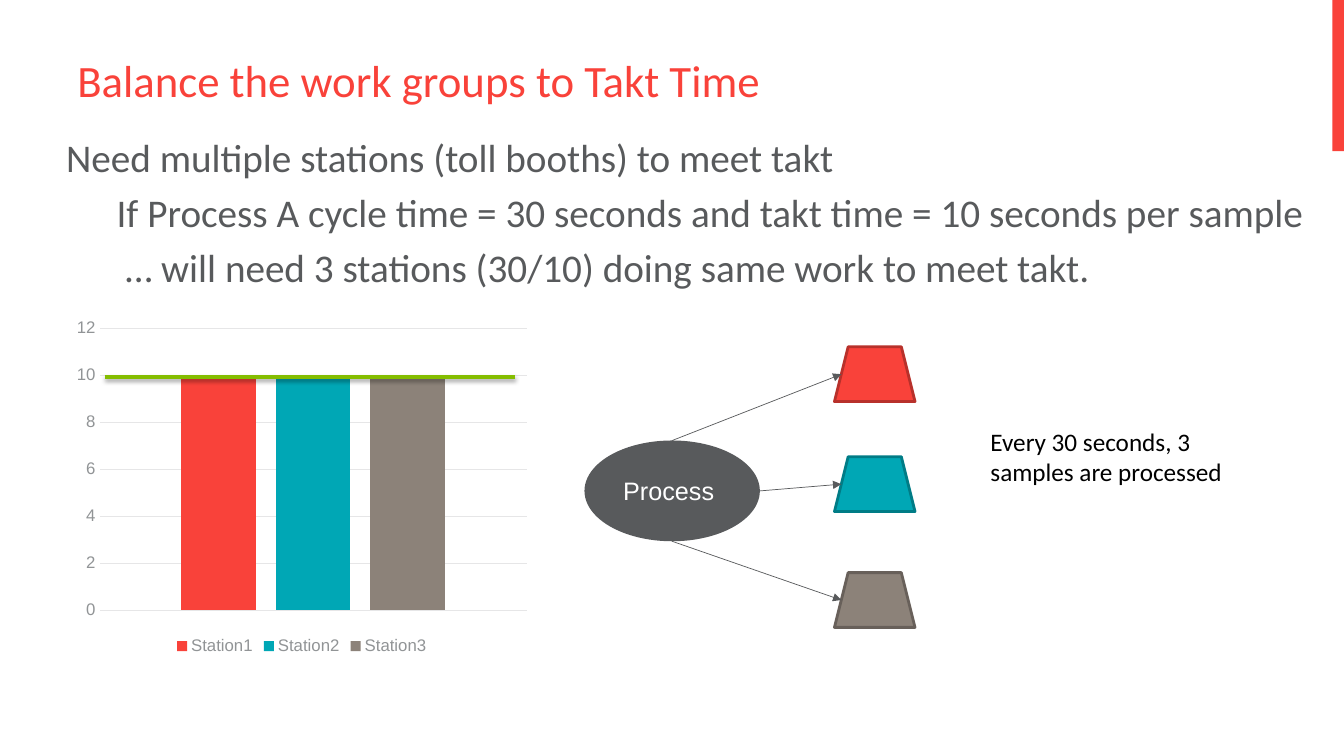
import pptx
import pptx.chart.data
import pptx.dml.color
import pptx.enum.chart
import pptx.enum.shapes
import pptx.enum.text
import pptx.oxml
import pptx.oxml.ns
import pptx.util

Cm = pptx.util.Cm
Pt = pptx.util.Pt
RGB = pptx.dml.color.RGBColor
SHAPE = pptx.enum.shapes.MSO_SHAPE
ANCHOR = pptx.enum.text.MSO_ANCHOR
ALIGN = pptx.enum.text.PP_ALIGN

RED = RGB(0xF9, 0x42, 0x3A)
TEAL = RGB(0x00, 0xA7, 0xB5)
TAUPE = RGB(0x8C, 0x82, 0x79)
DARK_RED = RGB(0xB8, 0x31, 0x2B)
DARK_TEAL = RGB(0x00, 0x7C, 0x86)
DARK_TAUPE = RGB(0x68, 0x60, 0x5A)
GREEN = RGB(0x84, 0xBD, 0x00)
SLATE = RGB(0x58, 0x5A, 0x5C)
GRAY = RGB(0x91, 0x94, 0x96)
PALE = RGB(0xE6, 0xE6, 0xE7)
WHITE = RGB(0xFF, 0xFF, 0xFF)
BLACK = RGB(0, 0, 0)

SHADOW = ('<a:outerShdw blurRad="39370" dist="22860" dir="5400000" rotWithShape="0">'
          '<a:srgbClr val="000000"><a:alpha val="35000"/></a:srgbClr></a:outerShdw>')


def style(font, size, color, face):
    font.size, font.name = Pt(size), face
    font.color.rgb = color


def write(frame, text, size=18, color=BLACK, face="Calibri", align=ALIGN.LEFT,
          anchor=ANCHOR.TOP, indents=(), gap=0):
    """Fill a frame with one paragraph per line; indents are in cm, gap in points."""
    frame.word_wrap = True
    frame.vertical_anchor = anchor
    frame.text = text
    for i, para in enumerate(frame.paragraphs):
        para.alignment = align
        if i:
            para.space_before = Pt(gap)
        if i < len(indents):
            para._p.get_or_add_pPr().set("marL", str(Cm(indents[i])))
        for run in para.runs:
            style(run.font, size, color, face)


class Board:
    def __init__(self, deck):
        self.slide = deck.slides.add_slide(deck.slide_layouts[6])
        self.shapes = self.slide.shapes

    def text(self, box, text, **form):
        label = self.shapes.add_textbox(*map(Cm, box))
        write(label.text_frame, text, **form)

    def shape(self, kind, box, fill, edge=None):
        item = self.shapes.add_shape(kind, *map(Cm, box))
        item.shadow.inherit = False
        item.fill.solid()
        item.fill.fore_color.rgb = fill
        if edge is None:
            item.line.fill.background()
        else:
            item.line.color.rgb = edge
            item.line.width = Pt(2)
        return item

    def line(self, start, end, color, width, arrow=False, effect=""):
        link = self.shapes.add_connector(
            pptx.enum.shapes.MSO_CONNECTOR.STRAIGHT, *map(Cm, start + end))
        link.line.color.rgb = color
        link.line.width = Pt(width)
        space = pptx.oxml.ns.nsdecls("a")
        if arrow:
            link.line._get_or_add_ln().append(
                pptx.oxml.parse_xml(f'<a:tailEnd {space} type="triangle"/>'))
        link._element.spPr.append(
            pptx.oxml.parse_xml(f"<a:effectLst {space}>{effect}</a:effectLst>"))

    def chart(self, box, names, values, colors):
        data = pptx.chart.data.CategoryChartData()
        data.categories = ["1"]
        for name, value in zip(names, values):
            data.add_series(name, [value])
        chart = self.shapes.add_chart(
            pptx.enum.chart.XL_CHART_TYPE.COLUMN_CLUSTERED, *map(Cm, box), data).chart
        style(chart.font, 10, SLATE, "Arial")
        chart.has_title = False
        chart.has_legend = True
        chart.legend.position = pptx.enum.chart.XL_LEGEND_POSITION.BOTTOM
        chart.legend.include_in_layout = False
        style(chart.legend.font, 12, GRAY, "Arial")

        plot = chart.plots[0]
        plot.gap_width, plot.overlap = 219, -27
        plot.vary_by_categories = False
        for series, color in zip(plot.series, colors):
            series.format.fill.solid()
            series.format.fill.fore_color.rgb = color

        chart.category_axis.visible = False
        axis = chart.value_axis
        axis.minimum_scale, axis.maximum_scale, axis.major_unit = 0, 12, 2
        axis.major_tick_mark = pptx.enum.chart.XL_TICK_MARK.NONE
        axis.format.line.fill.background()
        style(axis.tick_labels.font, 12, GRAY, "Arial")
        grid = axis.major_gridlines.format.line
        grid.color.rgb, grid.width = PALE, Pt(0.75)


def main():
    deck = pptx.Presentation()
    deck.slide_width, deck.slide_height = Cm(33.87), Cm(19.05)
    board = Board(deck)

    board.shape(SHAPE.RECTANGLE, (33.58, 0, 0.29, 3.81), RED)
    board.text((1.42, 3.23, 31.93, 4.4),
               "Need multiple stations (toll booths) to meet takt\n"
               "If Process A cycle time = 30 seconds and takt time = 10 seconds per sample\n"
               "… will need 3 stations (30/10) doing same work to meet takt.",
               size=28, color=SLATE, indents=(0, 1.27, 1.49), gap=5.6)
    board.text((1.7, 0.3, 30.48, 2.51), "Balance the work groups to Takt Time",
               size=32, color=RED, anchor=ANCHOR.BOTTOM)

    board.chart((1.7, 7.87, 11.81, 8.74), ("Station1", "Station2", "Station3"),
                (10, 10, 10), (RED, TEAL, TAUPE))
    board.line((2.64, 9.5), (12.98, 9.5), GREEN, 3, effect=SHADOW)

    left, top, wide, high = 14.73, 11.1, 4.42, 2.54
    hub = board.shape(SHAPE.OVAL, (left, top, wide, high), SLATE)
    write(hub.text_frame, "Process ", color=WHITE, face="Arial",
          align=ALIGN.CENTER, anchor=ANCHOR.MIDDLE)

    mid = left + wide / 2
    exits = ((mid, top), (left + wide, top + high / 2), (mid, top + high))
    booths = ((8.74, RED, DARK_RED), (11.51, TEAL, DARK_TEAL), (14.43, TAUPE, DARK_TAUPE))
    side, tall = 21.03, 1.38
    for start, (y, fill, edge) in zip(exits, booths):
        board.shape(SHAPE.TRAPEZOID, (side, y, 2.03, tall), fill, edge)
        board.line(start, (side + tall / 8, y + tall / 2), SLATE, 0.5, arrow=True)

    board.text((24.71, 10.62, 6.99, 1.8), "Every 30 seconds, 3 samples are processed")
    deck.save("out.pptx")


if __name__ == "__main__":
    main()
